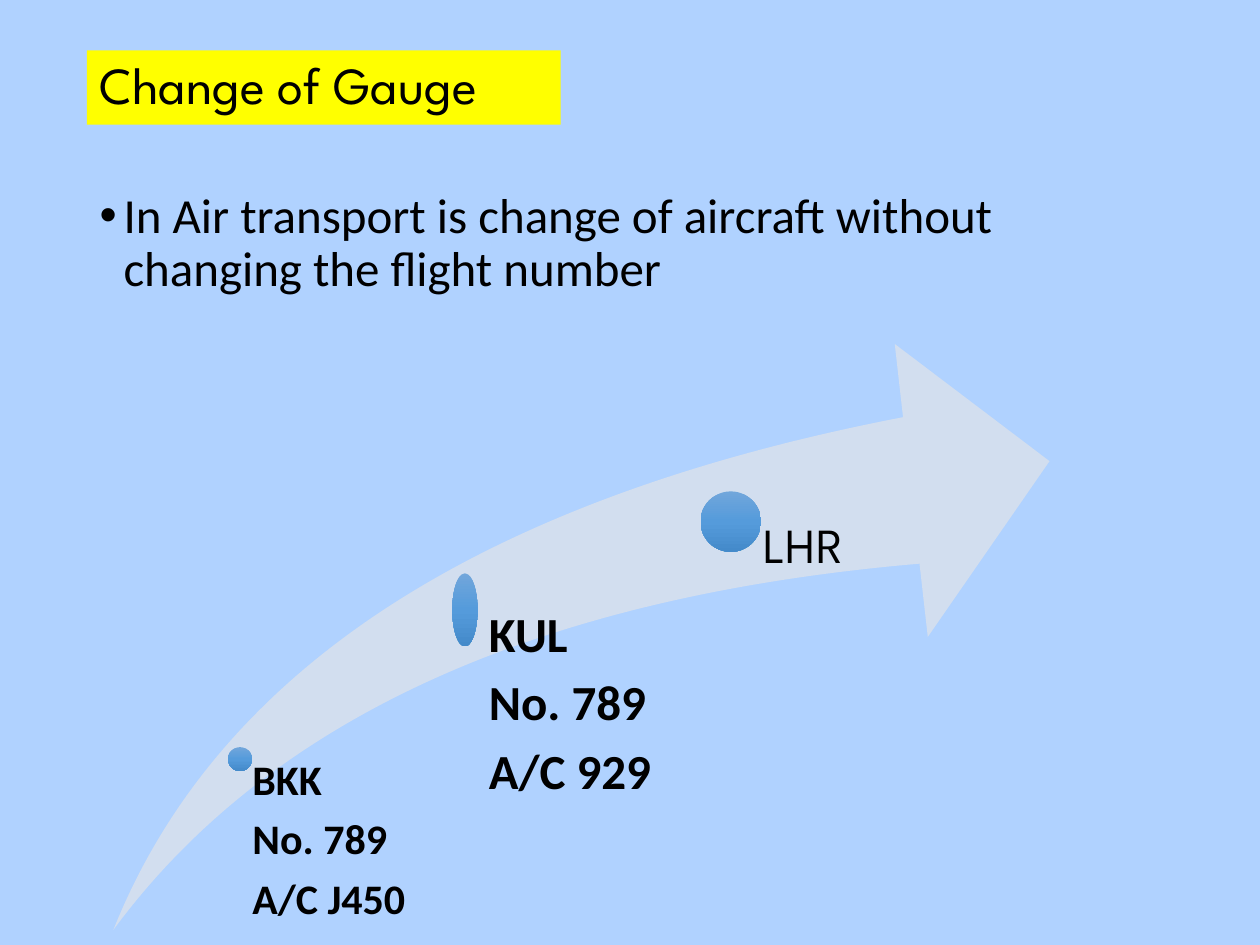
from copy import deepcopy
from pptx import Presentation
from pptx.dml.color import RGBColor as RGB
from pptx.enum.shapes import MSO_SHAPE as Kind
from pptx.enum.text import MSO_ANCHOR as Anchor, PP_ALIGN as Align, MSO_AUTO_SIZE as Fit
from pptx.oxml import parse_xml
from pptx.oxml.ns import nsdecls, qn
from pptx.util import Inches, Pt

HUES = {"back": "B0D2FF", "title": "FFFF00", "text": "000000", "arrow": "D2DEEF"}
SHADE = [(0, "71A6DB"), (0.5, "559BDB"), (1, "448ACA")]
HEAD, SANS = "League Spartan", "Calibri"
TITLE = "Change of Gauge"
BODY = "In Air transport is change of aircraft without changing the flight number"
ARROW = (0.9, 2.73, 7.43, 4.65)
STOPS = [
    {"dot": (1.81, 5.93, 0.19, 0.19), "wide": 1.73, "inset": 0.1, "size": 24,
     "font": SANS, "bold": True, "lines": ["BKK", "No. 789", "A/C J450"]},
    {"dot": (3.59, 4.55, 0.2, 0.58), "wide": 1.78, "inset": 0.19, "size": 28,
     "font": SANS, "bold": True, "lines": ["KUL", "No. 789", "A/C 929"]},
    {"dot": (5.56, 3.9, 0.48, 0.48), "wide": 1.78, "inset": 0.26, "size": 28,
     "font": HEAD, "bold": False, "lines": ["LHR"]},
]


def color(name):
    return RGB.from_string(HUES[name])


def place(shape, box):
    shape.left, shape.top, shape.width, shape.height = map(Inches, box)


def write(para, text, font, size, bold=False):
    para.alignment = Align.LEFT
    para.line_spacing = 0.9
    para.space_before = Pt(0)
    run = para.add_run()
    run.text = text
    run.font.name = font
    run.font.size = Pt(size)
    run.font.bold = bold
    run.font.color.rgb = color("text")


def draw(slide, kind, box):
    shape = slide.shapes.add_shape(kind, *map(Inches, box))
    shape.shadow.inherit = False
    shape.line.fill.background()
    return shape


def shade(shape):
    shape.fill.gradient()
    shape.fill.gradient_angle = 270
    stops = shape._element.spPr.find(".//" + qn("a:gsLst"))
    stops.insert(1, deepcopy(stops[0]))
    for stop, (pos, tone) in zip(shape.fill.gradient_stops, SHADE):
        stop.position = pos
        stop.color.rgb = RGB.from_string(tone)


def add_stop(slide, stop, floor):
    left, top, wide, high = stop["dot"]
    shade(draw(slide, Kind.OVAL, stop["dot"]))
    x, y = left + wide / 2, top + high / 2
    label = slide.shapes.add_textbox(0, 0, 0, 0)
    place(label, (x, y, stop["wide"], floor - y))
    frame = label.text_frame
    frame.word_wrap = True
    frame.margin_left = Inches(stop["inset"])
    frame.margin_top = frame.margin_right = frame.margin_bottom = 0
    for i, line in enumerate(stop["lines"]):
        para = frame.add_paragraph() if i else frame.paragraphs[0]
        write(para, line, stop["font"], stop["size"], stop["bold"])
        para.space_after = Pt(stop["size"] // 3)


def main():
    deck = Presentation()
    deck.slide_width, deck.slide_height = Inches(10), Inches(7.5)
    slide = deck.slides.add_slide(deck.slide_layouts[1])
    slide.background.fill.solid()
    slide.background.fill.fore_color.rgb = color("back")

    title, body = slide.placeholders
    place(title, (0.69, 0.4, 3.76, 0.59))
    title.fill.solid()
    title.fill.fore_color.rgb = color("title")
    title.text_frame.auto_size = Fit.NONE
    title.text_frame.vertical_anchor = Anchor.MIDDLE
    write(title.text_frame.paragraphs[0], TITLE, HEAD, 29.7)

    place(body, (0.69, 1.47, 8.62, 5.29))
    body.text_frame.auto_size = Fit.NONE
    para = body.text_frame.paragraphs[0]
    props = para._p.get_or_add_pPr()
    props.set("marL", str(Inches(0.19)))
    props.set("indent", str(Inches(-0.19)))
    props.append(parse_xml(f'<a:buFont {nsdecls("a")} typeface="Arial"/>'))
    props.append(parse_xml(f'<a:buChar {nsdecls("a")} char="•"/>'))
    write(para, BODY, SANS, 28)

    arrow = draw(slide, Kind.SWOOSH_ARROW, ARROW)
    arrow.fill.solid()
    arrow.fill.fore_color.rgb = color("arrow")
    arrow.adjustments[0] = arrow.adjustments[1] = 0.25
    for stop in STOPS:
        add_stop(slide, stop, ARROW[1] + ARROW[3])
    deck.save("out.pptx")


if __name__ == "__main__":
    main()
